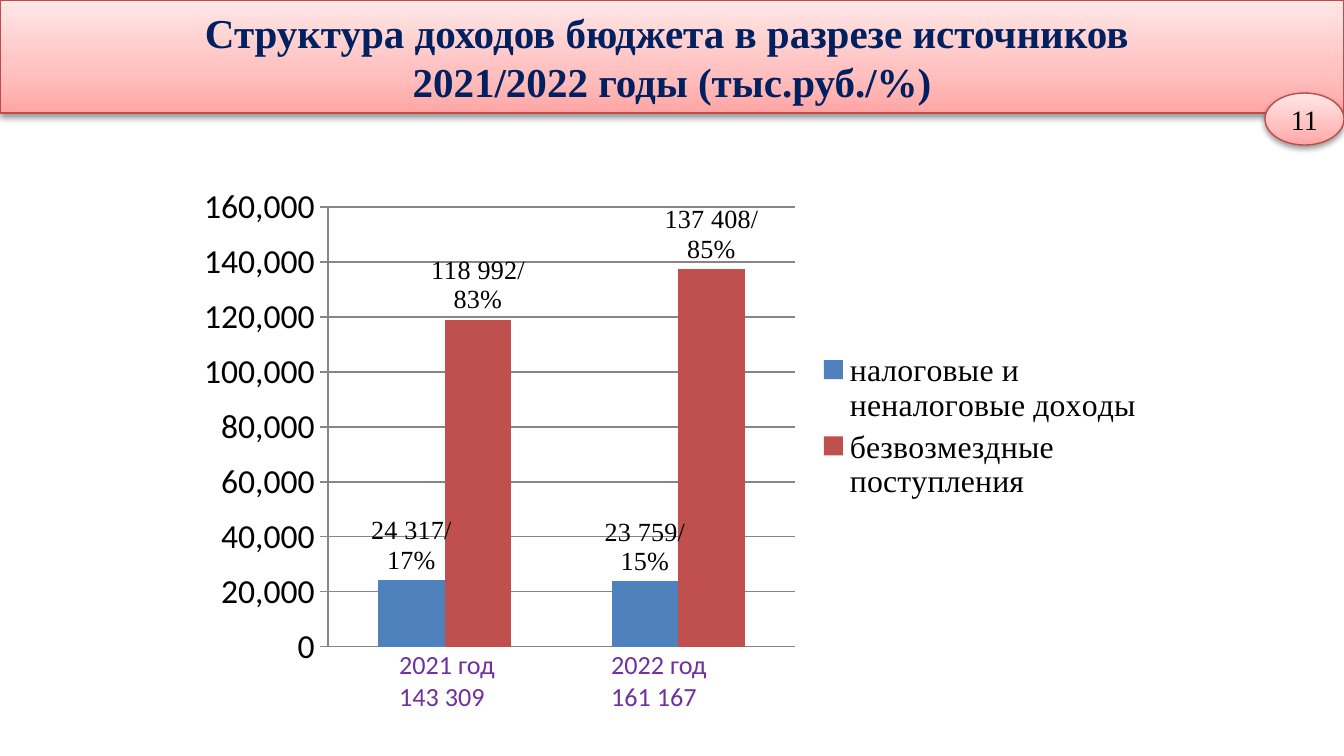
"""Build the slide on the structure of budget income for 2021 and 2022."""
from lxml.etree import SubElement
from pptx import Presentation
from pptx.chart.data import CategoryChartData
from pptx.dml.color import RGBColor
from pptx.enum.chart import XL_CHART_TYPE, XL_LABEL_POSITION, XL_LEGEND_POSITION, XL_TICK_MARK
from pptx.enum.shapes import MSO_SHAPE
from pptx.enum.text import MSO_ANCHOR, MSO_AUTO_SIZE, PP_ALIGN
from pptx.oxml import parse_xml
from pptx.oxml.ns import nsdecls, qn
from pptx.util import Pt

PX = 914400 / 134.4
COLORS = {
    "navy": "002060", "black": "000000", "purple": "7030A0", "outline": "BF4C48",
    "blue": "4F81BD", "red": "C0504D", "grid": "868686",
    "pink_dark": "FFA6A5", "pink": "FFC0BF", "pink_light": "FFE7E7",
}
SERIF, SANS = "Times New Roman", "Calibri"


def set_font(font, name, size, color, bold=False):
    font.name, font.size, font.bold = name, Pt(size), bold
    font.color.rgb = RGBColor.from_string(COLORS[color])


def add_pink_shape(slide, kind, box, text, size, color, bold):
    shape = slide.shapes.add_shape(kind, *[round(value * PX) for value in box])
    shape.line.color.rgb = RGBColor.from_string(COLORS["outline"])
    shape.line.width = Pt(0.75)
    stops = "".join(
        f'<a:gs pos="{position * 1000}"><a:srgbClr val="{COLORS[name]}"/></a:gs>'
        for position, name in ((0, "pink_dark"), (35, "pink"), (100, "pink_light")))
    properties = shape.element.spPr
    properties.find(qn("a:prstGeom")).addnext(parse_xml(
        f'<a:gradFill {nsdecls("a")} rotWithShape="1"><a:gsLst>{stops}</a:gsLst>'
        '<a:lin ang="16200000" scaled="0"/></a:gradFill>'))
    properties.append(parse_xml(
        f'<a:effectLst {nsdecls("a")}><a:outerShdw blurRad="{Pt(3.1)}" dist="{Pt(1.6)}" '
        f'dir="5400000" rotWithShape="0"><a:srgbClr val="{COLORS["black"]}">'
        '<a:alpha val="38000"/></a:srgbClr></a:outerShdw></a:effectLst>'))
    frame = shape.text_frame
    frame.word_wrap = True
    frame.vertical_anchor = MSO_ANCHOR.MIDDLE
    paragraph = frame.paragraphs[0]
    paragraph.text = text
    paragraph.alignment = PP_ALIGN.CENTER
    set_font(paragraph.font, SERIF, size, color, bold)


presentation = Presentation()
presentation.slide_width, presentation.slide_height = round(1344 * PX), round(756 * PX)
slide = presentation.slides.add_slide(presentation.slide_layouts[6])

add_pink_shape(slide, MSO_SHAPE.RECTANGLE, (0, 0, 1344, 113),
               "Структура доходов бюджета в разрезе источников \v2021/2022 годы (тыс.руб./%)",
               22, "navy", True)

income = (
    ("налоговые и неналоговые доходы", "blue", (24317, 23759), ("24 317/\n17%", "23 759/\n15%")),
    ("безвозмездные поступления", "red", (118992, 137408), ("118 992/\n83%", "137 408/\n85%")),
)
chart_data = CategoryChartData(number_format="#,##0")
chart_data.categories = ["1", "2"]
for name, color, values, labels in income:
    chart_data.add_series(name, values)
chart = slide.shapes.add_chart(
    XL_CHART_TYPE.COLUMN_CLUSTERED,
    *[round(value * PX) for value in (185, 177, 973, 500)], chart_data).chart
set_font(chart.font, SANS, 18, "black")
chart.has_title = False
chart.has_legend = True
chart.legend.position = XL_LEGEND_POSITION.RIGHT
chart.legend.include_in_layout = False
set_font(chart.legend.font, SERIF, 17, "black")

chart.category_axis.visible = False
value_axis = chart.value_axis
value_axis.minimum_scale, value_axis.maximum_scale = 0, 160000
value_axis.major_unit = 20000
value_axis.major_tick_mark = XL_TICK_MARK.CROSS
value_axis.tick_labels.number_format = "#,##0"
value_axis.tick_labels.number_format_is_linked = False
for line in (value_axis.format.line, value_axis.major_gridlines.format.line):
    line.color.rgb = RGBColor.from_string(COLORS["grid"])
    line.width = Pt(0.75)

plot_area = chart.element.chart.plotArea
for layout in plot_area.findall(qn("c:layout")):
    plot_area.remove(layout)
layout = parse_xml(f'<c:layout {nsdecls("c")}><c:manualLayout/></c:layout>')
for tag, value in (("layoutTarget", "inner"), ("xMode", "edge"), ("yMode", "edge"),
                   ("x", "0.147"), ("y", "0.06"), ("w", "0.48"), ("h", "0.88")):
    SubElement(layout[0], qn(f"c:{tag}")).set("val", value)
plot_area.insert(0, layout)

plot = chart.plots[0]
plot.vary_by_categories = False
plot.gap_width, plot.overlap = 150, 0
for series, (name, color, values, labels) in zip(plot.series, income):
    series.format.fill.solid()
    series.format.fill.fore_color.rgb = RGBColor.from_string(COLORS[color])
    series.data_labels.show_value = True
    series.data_labels.number_format = "#,##0"
    series.data_labels.number_format_is_linked = False
    series.data_labels.position = XL_LABEL_POSITION.OUTSIDE_END
    set_font(series.data_labels.font, SERIF, 14, "black")
    for index, text in enumerate(labels):
        label = series.points[index].data_label
        label.text_frame.text = text
        label.position = XL_LABEL_POSITION.OUTSIDE_END
        for paragraph in label.text_frame.paragraphs:
            set_font(paragraph.runs[0].font, SERIF, 14, "black")

for left, width, wrap, text in ((386, 137, True, "2021 год\n143 309"),
                                (598, 124, False, "2022 год\n161 167")):
    year_box = slide.shapes.add_textbox(*[round(value * PX) for value in (left, 642, width, 77)])
    frame = year_box.text_frame
    frame.word_wrap = wrap
    frame.auto_size = MSO_AUTO_SIZE.SHAPE_TO_FIT_TEXT
    frame.text = text
    for paragraph in frame.paragraphs:
        set_font(paragraph.font, SANS, 14, "purple")

add_pink_shape(slide, MSO_SHAPE.OVAL, (1265, 93, 79, 52), "11", 15, "black", False)

presentation.save("out.pptx")
